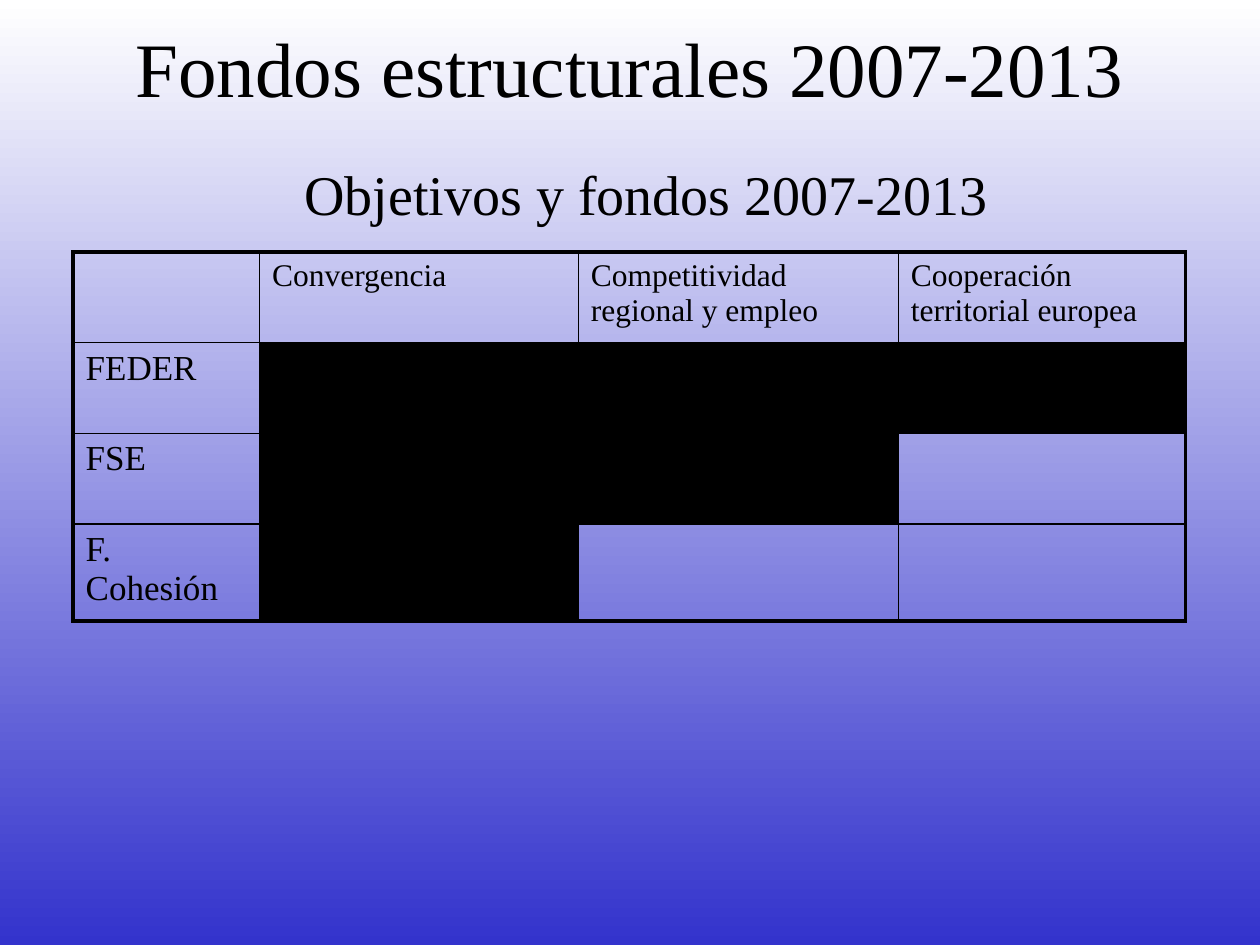
from dataclasses import dataclass

from lxml import etree
from pptx import Presentation
from pptx.dml.color import RGBColor
from pptx.enum.text import MSO_ANCHOR, PP_ALIGN
from pptx.oxml.ns import qn
from pptx.util import Pt

CENTER = PP_ALIGN.CENTER
TOP = MSO_ANCHOR.TOP
FONT = "Times New Roman"
COLORS = {"ink": "000000", "sky": "FFFFFF", "base": "3333CC"}
OUTER_LINE, INNER_LINE = 2.25, 1
HEADER_SIZE, FUND_SIZE = 18, 20
COLUMN_WIDTHS = [106.56, 182.16, 182.88, 164.16]
ROW_HEIGHTS = [51.84, 51.84, 51.84, 55.44]
OBJECTIVES = [
    "Convergencia",
    "Competitividad regional y empleo",
    "Cooperación territorial europea",
]


@dataclass
class Heading:
    text: str
    left: float
    top: float
    width: float
    height: float
    size: float
    top_margin: float


@dataclass
class Fund:
    name: str
    objectives_covered: int


HEADINGS = [
    Heading("Fondos estructurales 2007-2013", 54, 5.76, 612, 54, 44, 6),
    Heading("Objetivos y fondos 2007-2013", 156.24, 84.24, 426.24, 45.36, 32, 7),
]
FUNDS = [Fund("FEDER", 3), Fund("FSE", 2), Fund("F. Cohesión", 1)]


def color(name: str) -> RGBColor:
    return RGBColor.from_string(COLORS[name])


def format_text(para, size: float) -> None:
    for span in para.runs:
        span.font.name = FONT
        span.font.size = Pt(size)
        span.font.color.rgb = color("ink")


def paint_background(page) -> None:
    fill = page.background.fill
    fill.gradient()
    fill.gradient_angle = 270
    for stop, name, position in zip(fill.gradient_stops, ("sky", "base"), (0, 1)):
        stop.color.rgb = color(name)
        stop.position = position


def add_heading(page, heading: Heading) -> None:
    box = page.shapes.add_textbox(
        Pt(heading.left), Pt(heading.top), Pt(heading.width), Pt(heading.height)
    )
    frame = box.text_frame
    frame.word_wrap = True
    frame.vertical_anchor = TOP
    frame.margin_top = Pt(heading.top_margin)
    frame.text = heading.text
    para = frame.paragraphs[0]
    para.alignment = CENTER
    format_text(para, heading.size)


def set_borders(cell, row: int, column: int) -> None:
    outer_sides = {
        "a:lnL": column == 0,
        "a:lnR": column == len(COLUMN_WIDTHS) - 1,
        "a:lnT": row == 0,
        "a:lnB": row == len(ROW_HEIGHTS) - 1,
    }
    properties = cell._tc.get_or_add_tcPr()
    for tag, is_outer in outer_sides.items():
        width = Pt(OUTER_LINE if is_outer else INNER_LINE)
        line = etree.SubElement(properties, qn(tag), w=str(width))
        fill = etree.SubElement(line, qn("a:solidFill"))
        etree.SubElement(fill, qn("a:srgbClr"), val=COLORS["ink"])


def fill_cell(cell, text: str, size: float, is_covered: bool) -> None:
    cell.margin_left = cell.margin_right = Pt(7.2)
    cell.margin_top = cell.margin_bottom = Pt(3.6)
    if is_covered:
        cell.fill.solid()
        cell.fill.fore_color.rgb = color("ink")
    else:
        cell.fill.background()
    if text:
        cell.text_frame.text = text
        format_text(cell.text_frame.paragraphs[0], size)


def add_fund_table(page) -> None:
    table = page.shapes.add_table(
        len(ROW_HEIGHTS), len(COLUMN_WIDTHS), Pt(41.76), Pt(144),
        Pt(sum(COLUMN_WIDTHS)), Pt(sum(ROW_HEIGHTS)),
    ).table
    table.first_row = False
    table.horz_banding = False
    for column, width in zip(table.columns, COLUMN_WIDTHS):
        column.width = Pt(width)
    for row, height in zip(table.rows, ROW_HEIGHTS):
        row.height = Pt(height)

    labels = ["", *OBJECTIVES]
    for row in range(len(ROW_HEIGHTS)):
        for column, label in enumerate(labels):
            cell = table.cell(row, column)
            set_borders(cell, row, column)
            if row == 0:
                fill_cell(cell, label, HEADER_SIZE, False)
            else:
                fund = FUNDS[row - 1]
                name = fund.name if column == 0 else ""
                is_covered = 1 <= column <= fund.objectives_covered
                fill_cell(cell, name, FUND_SIZE, is_covered)


def main() -> None:
    deck = Presentation()
    deck.slide_width, deck.slide_height = Pt(720), Pt(540)
    page = deck.slides.add_slide(deck.slide_layouts[6])
    paint_background(page)
    for heading in HEADINGS:
        add_heading(page, heading)
    add_fund_table(page)
    deck.save("out.pptx")


if __name__ == "__main__":
    main()
